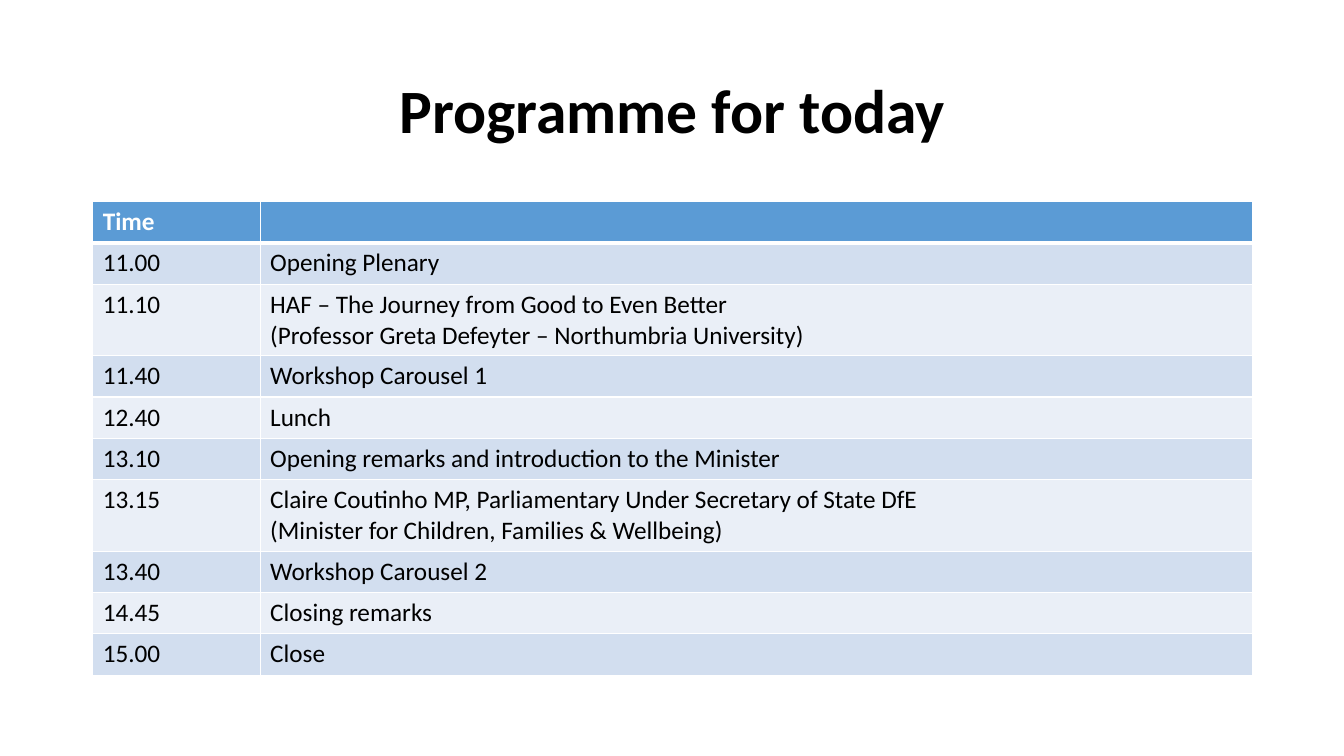
"""Build the programme slide: a title above a timetable."""
from pptx import Presentation
from pptx.dml.color import RGBColor
from pptx.enum.text import MSO_ANCHOR, PP_ALIGN
from pptx.oxml import parse_xml
from pptx.oxml.ns import nsdecls
from pptx.util import Inches, Pt

WHITE, BLACK, HEADER_BLUE = "FFFFFF", "000000", "5B9BD5"
BANDS = ["EAEFF7", "D2DEEF"]
PROGRAMME = [
    ("Time", ""),
    ("11.00", "Opening Plenary"),
    ("11.10", "HAF – The Journey from Good to Even Better\n"
              "(Professor Greta Defeyter – Northumbria University)"),
    ("11.40", "Workshop Carousel 1"),
    ("12.40", "Lunch"),
    ("13.10", "Opening remarks and introduction to the Minister"),
    ("13.15", "Claire Coutinho MP, Parliamentary Under Secretary of State DfE\n"
              "(Minister for Children, Families & Wellbeing)"),
    ("13.40", "Workshop Carousel 2"),
    ("14.45", "Closing remarks"),
    ("15.00", "Close"),
]


def rgb(color):
    return RGBColor.from_string(color)


def style(p, size, color, bold):
    p.font.name = "Calibri"
    p.font.size = Pt(size)
    p.font.bold = bold
    p.font.color.rgb = rgb(color)


prs = Presentation()
prs.slide_width, prs.slide_height = Inches(13.33), Inches(7.5)
s = prs.slides.add_slide(prs.slide_layouts[6])

title = s.shapes.add_textbox(Inches(0.92), Inches(0.4), Inches(11.5), Inches(1.45))
tf = title.text_frame
tf.word_wrap = True
tf.vertical_anchor = MSO_ANCHOR.MIDDLE
tf.text = "Programme for today"
p = tf.paragraphs[0]
p.alignment = PP_ALIGN.CENTER
p.line_spacing = 0.9
style(p, 44, BLACK, True)

table = s.shapes.add_table(len(PROGRAMME), 2, Inches(0.92), Inches(2),
                           Inches(11.5), Inches(4.64)).table
for column, width in zip(table.columns, (1.66, 9.84)):
    column.width = Inches(width)

for i, entry in enumerate(PROGRAMME):
    is_header = i == 0
    lines = entry[1].count("\n") + 1
    table.rows[i].height = Inches(0.11 + 0.3 * lines)
    for j, text in enumerate(entry):
        cell = table.cell(i, j)
        cell.text = text
        for p in cell.text_frame.paragraphs:
            style(p, 18, WHITE if is_header else BLACK, is_header)
        tc_pr = cell._tc.get_or_add_tcPr()
        for side in "LRTB":
            thick = (is_header and side == "B") or (i == 1 and side == "T")
            tc_pr.append(parse_xml(
                f'<a:ln{side} {nsdecls("a")} w="{Pt(3 if thick else 1)}"><a:solidFill>'
                f'<a:srgbClr val="{WHITE}"/></a:solidFill></a:ln{side}>'))
        cell.fill.solid()
        cell.fill.fore_color.rgb = rgb(HEADER_BLUE if is_header else BANDS[i % 2])

prs.save("out.pptx")
